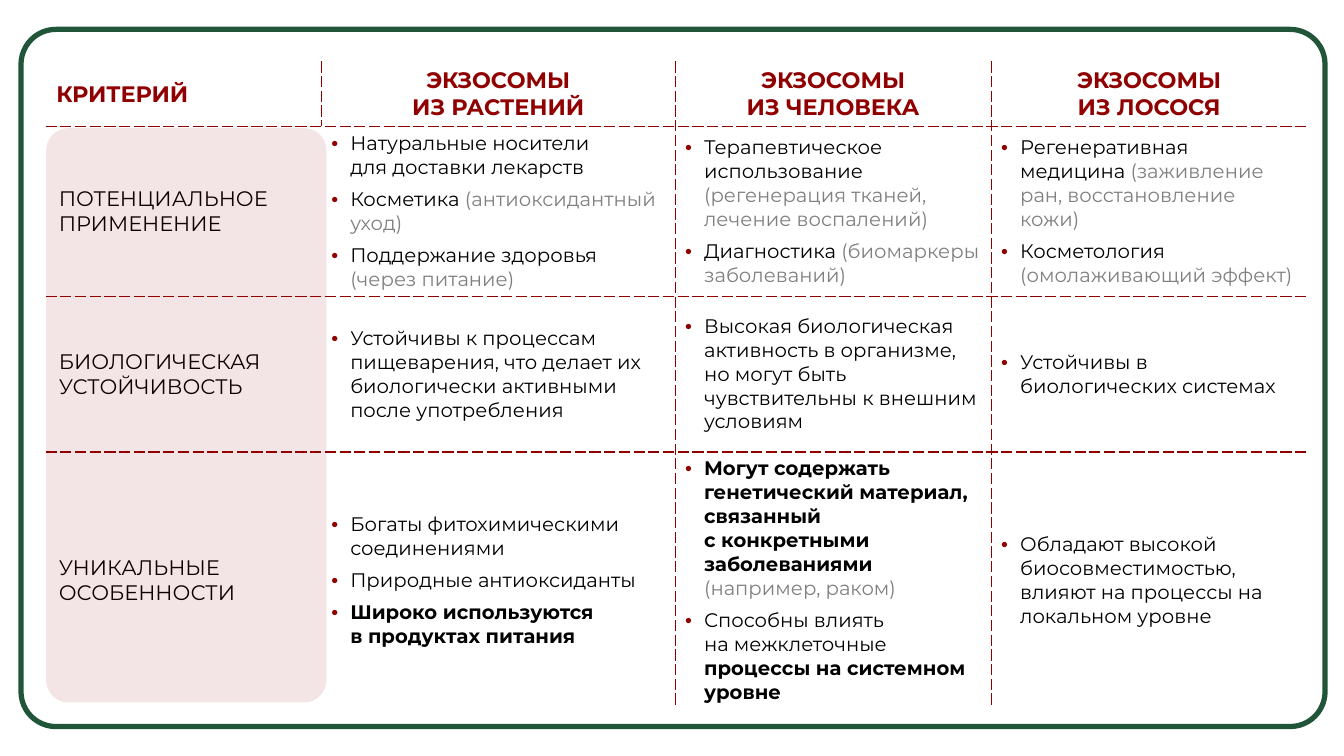
from lxml.etree import SubElement
from pptx import Presentation
from pptx.dml.color import RGBColor
from pptx.enum.shapes import MSO_SHAPE
from pptx.enum.text import MSO_ANCHOR, PP_ALIGN
from pptx.oxml.ns import qn
from pptx.util import Pt

PX = 9525
FONT = "Montserrat"
RED, GREEN, GRAY, BLACK, WHITE = "900000", "21553A", "808080", "000000", "FFFFFF"
LOOKS = {"plain": (BLACK, False), "note": (GRAY, False), "bold": (BLACK, True)}
WIDTHS = [262, 337, 301, 301]
HEIGHTS = [60, 160, 148, 240]
HEADS = ["КРИТЕРИЙ", "ЭКЗОСОМЫ\nИЗ РАСТЕНИЙ", "ЭКЗОСОМЫ\nИЗ ЧЕЛОВЕКА", "ЭКЗОСОМЫ\nИЗ ЛОСОСЯ"]
ROWS = [
    ("ПОТЕНЦИАЛЬНОЕ ПРИМЕНЕНИЕ", [
        [[("Натуральные носители\nдля доставки лекарств", "plain")],
         [("Косметика ", "plain"), ("(антиоксидантный уход)", "note")],
         [("Поддержание здоровья ", "plain"), ("(через питание)", "note")]],
        [[("Терапевтическое использование ", "plain"),
          ("(регенерация тканей, лечение воспалений)", "note")],
         [("Диагностика ", "plain"), ("(биомаркеры заболеваний)", "note")]],
        [[("Регенеративная медицина ", "plain"),
          ("(заживление ран, восстановление кожи)", "note")],
         [("Косметология\n", "plain"), ("(омолаживающий эффект)", "note")]],
    ]),
    ("БИОЛОГИЧЕСКАЯ УСТОЙЧИВОСТЬ", [
        [[("Устойчивы к процессам пищеварения, что делает их "
           "биологически активными после употребления", "plain")]],
        [[("Высокая биологическая активность в организме, но могут быть "
           "чувствительны к внешним условиям", "plain")]],
        [[("Устойчивы в биологических системах", "plain")]],
    ]),
    ("УНИКАЛЬНЫЕ ОСОБЕННОСТИ", [
        [[("Богаты фитохимическими соединениями", "plain")],
         [("Природные антиоксиданты", "plain")],
         [("Широко используются\nв продуктах питания", "bold")]],
        [[("Могут содержать генетический материал, связанный\n"
           "с конкретными заболеваниями ", "bold"), ("(например, раком)", "note")],
         [("Способны влиять\nна межклеточные ", "plain"),
          ("процессы на системном уровне", "bold")]],
        [[("Обладают высокой биосовместимостью, влияют на процессы "
           "на локальном уровне", "plain")]],
    ]),
]


def paint(target, color):
    """Set a colour object from a hex string."""
    target.rgb = RGBColor.from_string(color)


def write(para, text, size, color, bold=False):
    """Add text to a paragraph, with a line break at each newline."""
    for i, part in enumerate(text.split("\n")):
        if i:
            para.add_line_break()
        if part:
            run = para.add_run()
            run.text = part
            run.font.name, run.font.size, run.font.bold = FONT, Pt(size), bold
            paint(run.font.color, color)


def bullet(para):
    """Give a paragraph a hanging red bullet."""
    props = para._p.get_or_add_pPr()
    props.set("marL", str(18 * PX))
    props.set("indent", str(-18 * PX))
    tint = SubElement(props, qn("a:buClr"))
    SubElement(tint, qn("a:srgbClr"), val=RED)
    SubElement(props, qn("a:buFont"), typeface="Arial")
    SubElement(props, qn("a:buChar"), char="•")


def border(cell, sides):
    """Draw dashed lines on the given sides of a cell, then fill it."""
    props = cell._tc.get_or_add_tcPr()
    for side in sides:
        line = SubElement(props, qn("a:ln" + side), w=str(Pt(1)))
        fill = SubElement(line, qn("a:solidFill"))
        SubElement(fill, qn("a:srgbClr"), val=RED)
        SubElement(line, qn("a:prstDash"), val="sysDash")
    cell.fill.solid()
    paint(cell.fill.fore_color, WHITE)


def panel(slide, box, curve, fill):
    """Add a rounded panel without an outline."""
    shape = slide.shapes.add_shape(MSO_SHAPE.ROUNDED_RECTANGLE, *[n * PX for n in box])
    shape.adjustments[0] = curve
    shape.shadow.inherit = False
    shape.fill.solid()
    paint(shape.fill.fore_color, fill)
    shape.line.fill.background()
    return shape


def frame(slide, box):
    """Add the green frame around the slide."""
    shape = panel(slide, box, 0.05, WHITE)
    paint(shape.line.color, GREEN)
    shape.line.width = Pt(3.75)


def veil(slide, box):
    """Add the sheer red panel over the criteria."""
    shape = panel(slide, box, 0.08, RED)
    tint = shape.fill._xPr.find(qn("a:solidFill"))[0]
    SubElement(tint, qn("a:alpha"), val="10000")


def grid(slide, box):
    """Add the table that compares the exosomes."""
    table = slide.shapes.add_table(len(HEIGHTS), len(WIDTHS), *[n * PX for n in box]).table
    table.first_row = table.horz_banding = False
    for col, width in zip(table.columns, WIDTHS):
        col.width = width * PX
    for row, height in zip(table.rows, HEIGHTS):
        row.height = height * PX
    for r in range(len(HEIGHTS)):
        for c in range(len(WIDTHS)):
            cell = table.cell(r, c)
            cell.vertical_anchor = MSO_ANCHOR.MIDDLE
            sides = {"L": c > 1 or (c == 1 and r == 0),
                     "R": c in (1, 2) or (c == 0 and r == 0),
                     "T": r > 0, "B": r < len(HEIGHTS) - 1}
            border(cell, [side for side in sides if sides[side]])
            para = cell.text_frame.paragraphs[0]
            if r == 0:
                para.alignment = PP_ALIGN.CENTER if c else PP_ALIGN.LEFT
                write(para, HEADS[c], 16, RED, True)
            elif c == 0:
                cell.margin_left = 12 * PX
                write(para, ROWS[r - 1][0], 15, BLACK)
            else:
                items(cell.text_frame, ROWS[r - 1][1][c - 1])


def items(text, paras):
    """Fill a text frame with bulleted paragraphs."""
    for i, runs in enumerate(paras):
        para = text.add_paragraph() if i else text.paragraphs[0]
        if i:
            para.space_before = Pt(6)
        bullet(para)
        for words, look in runs:
            write(para, words, 14, *LOOKS[look])


def main():
    """Build the slide and save it."""
    deck = Presentation()
    deck.slide_width, deck.slide_height = 1280 * PX, 720 * PX
    slide = deck.slides.add_slide(deck.slide_layouts[6])
    frame(slide, (20, 28, 1242, 664))
    grid(slide, (44, 59, sum(WIDTHS), sum(HEIGHTS)))
    veil(slide, (44, 122, 267, 547))
    deck.save("out.pptx")


if __name__ == "__main__":
    main()
